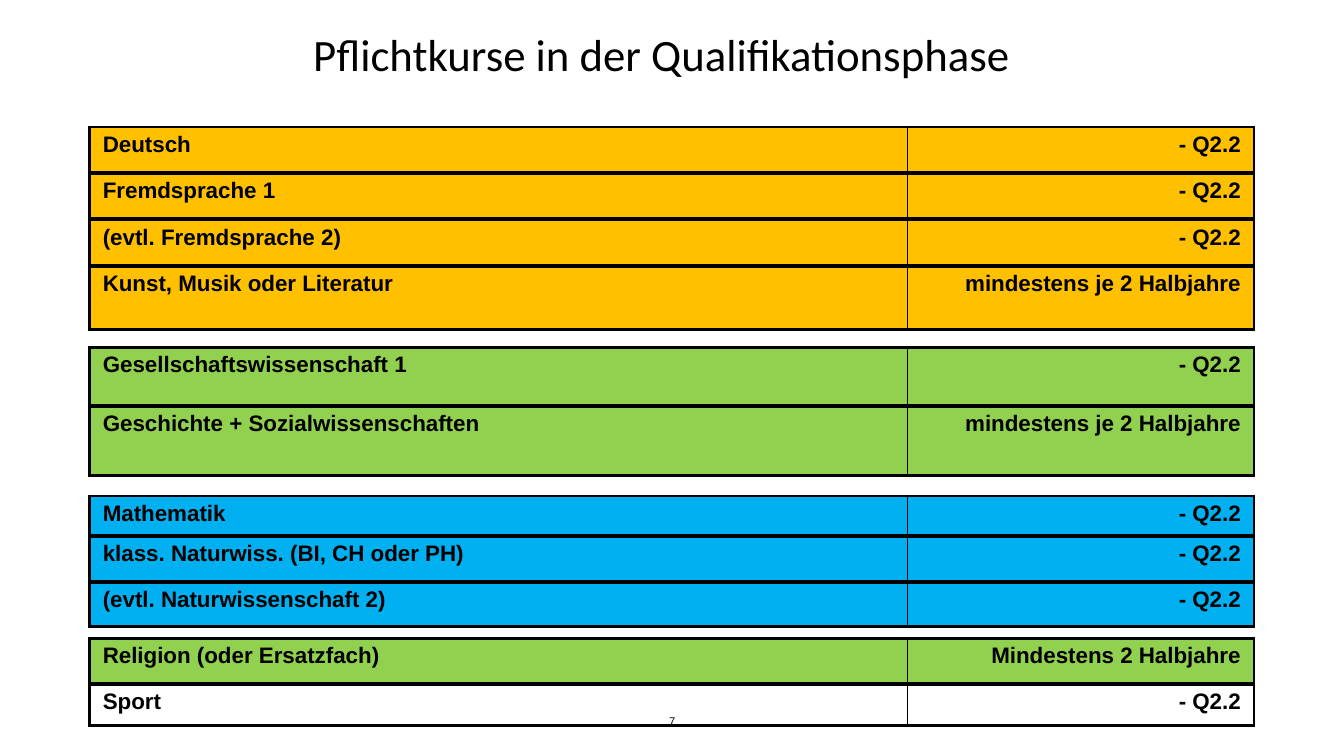
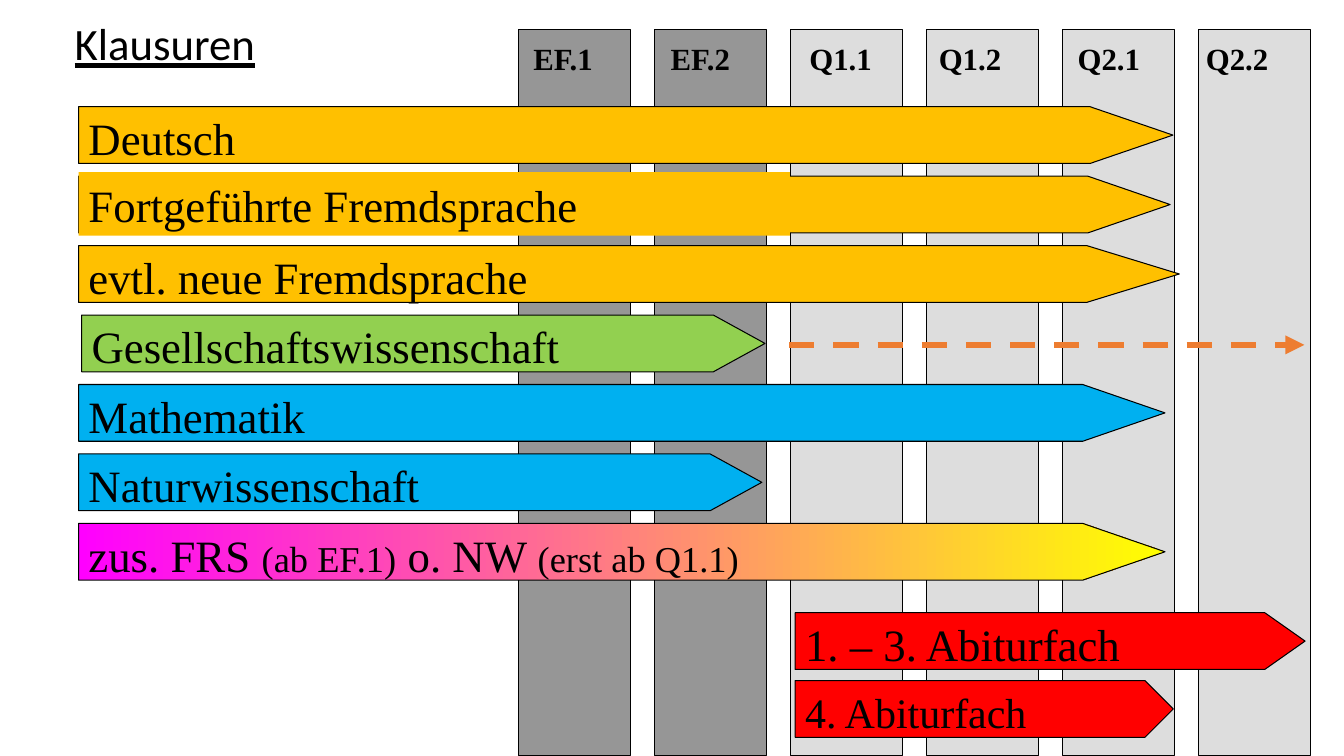
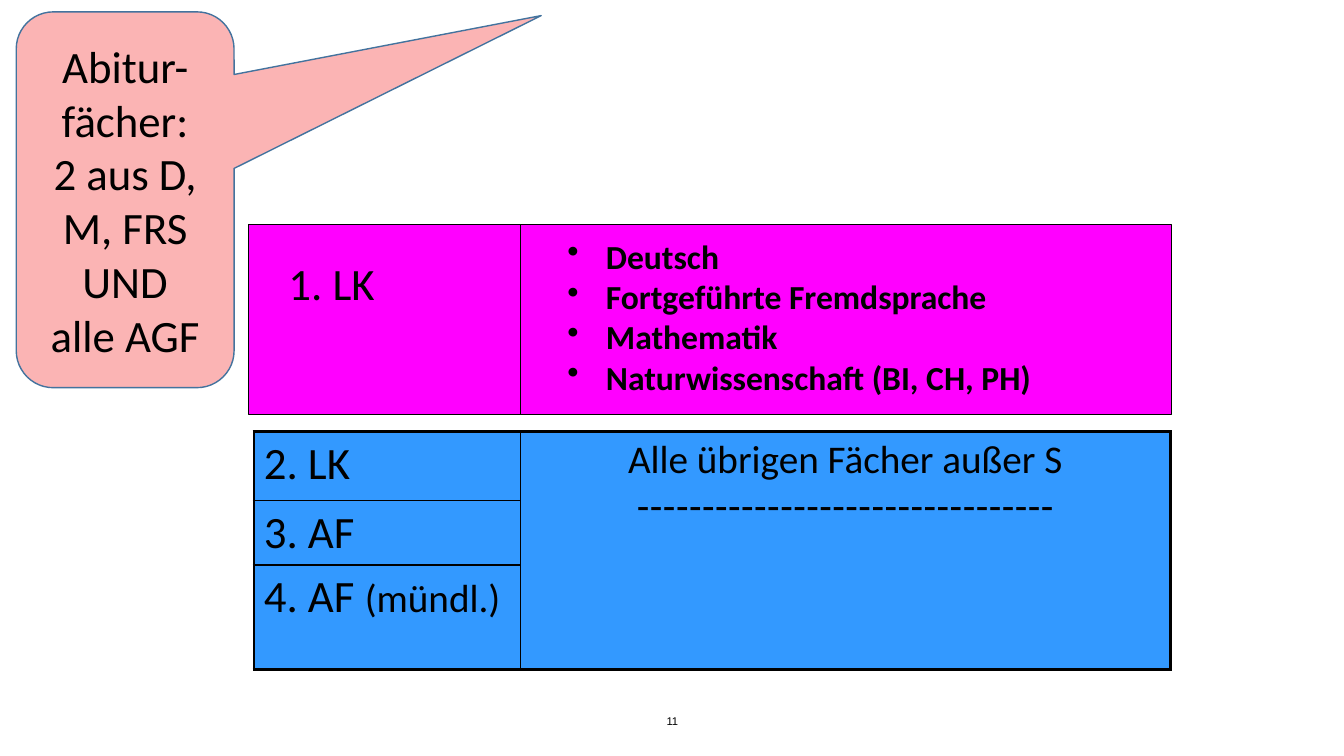
from lxml import etree
from pptx import Presentation
from pptx.dml.color import RGBColor
from pptx.enum import dml, shapes, text
from pptx.oxml import ns
from pptx.util import Cm, Pt

COLORS = {
    "black": "000000", "languages": "FFC000", "society": "92D050",
    "science": "00B0F0", "exam": "FF0000", "intro": "969696",
    "qualification": "DDDDDD", "dashes": "ED7D31", "pink": "FF00FF",
    "yellow": "FFFF00", "blue": "3399FF", "callout": "F51616",
    "callout_line": "43739E",
}
LEFT, CENTER, RIGHT = text.PP_ALIGN.LEFT, text.PP_ALIGN.CENTER, text.PP_ALIGN.RIGHT
TOP, MIDDLE = text.MSO_ANCHOR.TOP, text.MSO_ANCHOR.MIDDLE
BODY, HEADING, SERIF = "Arial", "Calibri", "Times New Roman"
INSETS = (0.25, 0.13, 0.25, 0.13)

# Course blocks: top, colour, rows of (subject, duration, height)
COURSE_BLOCKS = [
    (3.2, "languages", [
        ("Deutsch", "- Q2.2", 1.14),
        ("Fremdsprache 1", "- Q2.2", 1.14),
        ("(evtl. Fremdsprache 2)", "- Q2.2", 1.14),
        ("Kunst, Musik oder Literatur", "mindestens je 2 Halbjahre", 1.6)]),
    (8.76, "society", [
        ("Gesellschaftswissenschaft 1", "- Q2.2", 1.45),
        ("Geschichte + Sozialwissenschaften", "mindestens je 2 Halbjahre", 1.75)]),
    (12.5, "science", [
        ("Mathematik", "- Q2.2", 0.99),
        ("klass. Naturwiss. (BI, CH oder PH)", "- Q2.2", 1.12),
        ("(evtl. Naturwissenschaft 2)", "- Q2.2", 1.12)]),
    (16.08, "society", [("Religion (oder Ersatzfach)", "Mindestens 2 Halbjahre", 1.14)]),
    (17.25, None, [("Sport", "- Q2.2", 1.04)]),
]
COURSE_LEFT, COURSE_COLUMNS, COURSE_GAP = 2.26, (20.6, 8.74), 0.03

# Terms: name, colour, text inset
TERMS = [
    ("EF.1", "intro", 0.38), ("EF.2", "intro", 0.41),
    ("Q1.1", "qualification", 0.48), ("Q1.2", "qualification", 0.31),
    ("Q2.1", "qualification", 0.38), ("Q2.2", "qualification", 0.18),
]
TERM_LEFT, TERM_TOP, TERM_STEP, TERM_WIDTH, TERM_HEIGHT = 13.06, 0.74, 3.43, 2.82, 18.31

# Bar groups: top, step, bars of (runs, size, colour, left, width, tip)
BAR_GROUPS = [
    (2.69, 1.75, [
        (["Deutsch"], 32, "languages", 1.98, 27.58, 1.46),
        ([], 32, "languages", 1.98, 27.51, 1.45),
        (["evtl. neue Fremdsprache"], 32, "languages", 1.98, 27.74, 1.63),
        (["Gesellschaftswissenschaft"], 32, "society", 2.06, 17.22, 0.91),
        (["Mathematik"], 32, "science", 1.98, 27.38, 1.45),
        (["Naturwissenschaft"], 32, "science", 1.98, 17.22, 0.91),
        (["zus. FRS ", ("(ab EF.1)", 26), " o. NW ", ("(erst ab Q1.1)", 26)],
         32, ("pink", "yellow"), 1.98, 27.38, 1.45)]),
    (15.44, 1.71, [
        (["1. – 3. Abiturfach"], 32, "exam", 20.04, 12.85, 0.71),
        (["4. Abiturfach"], 30, "exam", 20.04, 9.53, 0.5)]),
]
BAR_HEIGHT = 1.43

MAIN_SUBJECTS = ["Deutsch", "Fortgeführte Fremdsprache", "Mathematik",
                 "Naturwissenschaft (BI, CH, PH)"]
OTHER_EXAMS = [["2. LK"], ["3. AF"], ["4. AF ", ("(mündl.)", 28)]]
CALLOUT = ["Abitur-fächer:", "2 aus D, M, FRS", "UND", "alle AGF"]


def rgb(name):
    return RGBColor.from_string(COLORS[name])


def box(*lengths):
    return [Cm(length) for length in lengths]


def write(frame, paragraphs, font, size, bold=False, align=LEFT, anchor=TOP,
          insets=INSETS, bullet=None):
    """Fill a frame; a paragraph is a list of runs, a run a string or (string, size)."""
    frame.word_wrap = True
    frame.vertical_anchor = anchor
    (frame.margin_left, frame.margin_top,
     frame.margin_right, frame.margin_bottom) = box(*insets)
    for index, runs in enumerate(paragraphs):
        paragraph = frame.add_paragraph() if index else frame.paragraphs[0]
        paragraph.alignment = align
        if bullet:
            properties = paragraph._p.get_or_add_pPr()
            properties.set("marL", str(Cm(0.97)))
            properties.set("indent", str(Cm(-0.97)))
            etree.SubElement(properties, ns.qn("a:buChar")).set("char", bullet)
        for item in runs:
            words, run_size = (item, size) if isinstance(item, str) else item
            run = paragraph.add_run()
            run.text = words
            run.font.name, run.font.size, run.font.bold = font, Pt(run_size), bold
            run.font.color.rgb = rgb("black")


def add_shape(slide, kind, place, fill, line="black", width=0.75):
    """Add a preset shape; a pair of fill colours makes a gradient from left to right."""
    shape = slide.shapes.add_shape(kind, *box(*place))
    shape.shadow.inherit = False
    if isinstance(fill, tuple):
        shape.fill.gradient()
        shape.fill.gradient_angle = 0
        for position, (stop, name) in enumerate(zip(shape.fill.gradient_stops, fill)):
            stop.position, stop.color.rgb = position, rgb(name)
    else:
        shape.fill.solid()
        shape.fill.fore_color.rgb = rgb(fill)
    if line:
        shape.line.color.rgb, shape.line.width = rgb(line), Pt(width)
    else:
        shape.line.fill.background()
    return shape


def add_table(slide, left, top, columns, rows):
    shape = slide.shapes.add_table(
        len(rows), len(columns), *box(left, top, sum(columns), sum(rows)))
    table = shape.table
    table.first_row = table.horz_banding = False
    for column, width in zip(table.columns, columns):
        column.width = Cm(width)
    for row, height in zip(table.rows, rows):
        row.height = Cm(height)
    return table


def style_cells(table, fill):
    """Draw thick outer and thin inner borders, and fill the cells."""
    row_count, column_count = len(table.rows), len(table.columns)
    for r in range(row_count):
        for c in range(column_count):
            cell = table.cell(r, c)
            below = r + (cell.span_height if cell.is_merge_origin else 1)
            outer = {"L": c == 0, "R": c == column_count - 1,
                     "T": r == 0, "B": below == row_count}
            properties = cell._tc.get_or_add_tcPr()
            for side, thick in outer.items():
                if cell.is_spanned and side in "TB" and not thick:
                    continue
                border = etree.SubElement(properties, ns.qn("a:ln" + side))
                border.set("w", str(Pt(2.25 if thick else 1)))
                solid = etree.SubElement(border, ns.qn("a:solidFill"))
                etree.SubElement(solid, ns.qn("a:srgbClr")).set("val", COLORS["black"])
            if fill:
                cell.fill.solid()
                cell.fill.fore_color.rgb = rgb(fill)
            else:
                cell.fill.background()


def write_cell(cell, paragraphs, font, size, side_inset, **style):
    write(cell.text_frame, paragraphs, font, size, **style)
    cell.margin_left = cell.margin_right = Cm(side_inset)
    cell.margin_top = cell.margin_bottom = Cm(0.13)


def add_slide(presentation, title=None, place=None, align=LEFT, anchor=TOP,
              underline=False, number=None):
    slide = presentation.slides.add_slide(presentation.slide_layouts[5 if title else 6])
    if title:
        heading = slide.shapes.title
        heading.left, heading.top, heading.width, heading.height = box(*place)
        write(heading.text_frame, [[title]], HEADING, 32, align=align, anchor=anchor)
        paragraph = heading.text_frame.paragraphs[0]
        paragraph.line_spacing = 0.9
        paragraph.runs[0].font.underline = underline
    if number:
        footer = slide.shapes.add_textbox(*box(11.23, 17.65, 11.43, 1.02))
        write(footer.text_frame, [[number]], BODY, 8, align=CENTER, anchor=MIDDLE)
    return slide


def build_courses(presentation):
    slide = add_slide(presentation, "Pflichtkurse in der Qualifikationsphase",
                      (0.84, 0.71, 31.67, 1.47), CENTER, MIDDLE, number="7")
    for top, fill, rows in COURSE_BLOCKS:
        for subject, duration, height in rows:
            table = add_table(slide, COURSE_LEFT, top, COURSE_COLUMNS, [height])
            style_cells(table, fill)
            for column, (words, align) in enumerate([(subject, LEFT), (duration, RIGHT)]):
                write_cell(table.cell(0, column), [[words]], BODY, 16, 0.33,
                           bold=True, align=align)
            top += height + COURSE_GAP


def build_written_exams(presentation):
    slide = add_slide(presentation, "Klausuren", (1.63, 0.43, 10.24, 3.18),
                      underline=True)
    for index, (term, fill, inset) in enumerate(TERMS):
        column = add_shape(slide, shapes.MSO_SHAPE.RECTANGLE,
                           (TERM_LEFT + index * TERM_STEP, TERM_TOP,
                            TERM_WIDTH, TERM_HEIGHT), fill)
        write(column.text_frame, [[term]], SERIF, 22, bold=True,
              insets=(inset, 0.27, 0, 0.13))
    for top, step, bars in BAR_GROUPS:
        for index, (runs, size, fill, left, width, tip) in enumerate(bars):
            bar = add_shape(slide, shapes.MSO_SHAPE.PENTAGON,
                            (left, top + index * step, width, BAR_HEIGHT), fill)
            bar.adjustments[0] = tip
            if runs:
                write(bar.text_frame, [runs], SERIF, size, anchor=MIDDLE,
                      insets=(0.25, 0.12, 0, 0))
    language = add_shape(slide, shapes.MSO_SHAPE.RECTANGLE,
                         (1.98, 4.34, 17.93, 1.6), "languages", line=None)
    write(language.text_frame, [["Fortgeführte Fremdsprache"]], SERIF, 32)

    arrow = slide.shapes.add_connector(shapes.MSO_CONNECTOR.STRAIGHT,
                                       *box(19.89, 8.69, 32.87, 8.69))
    arrow.line.color.rgb, arrow.line.width = rgb("dashes"), Pt(4.5)
    arrow.line.dash_style = dml.MSO_LINE.DASH
    etree.SubElement(arrow.line._ln, ns.qn("a:tailEnd")).set("type", "triangle")
    etree.SubElement(arrow._element.spPr, ns.qn("a:effectLst"))


def build_exam_subjects(presentation):
    slide = add_slide(presentation, number="11")
    first_exam = add_shape(slide, shapes.MSO_SHAPE.RECTANGLE,
                           (6.27, 5.66, 6.84, 4.78), "pink")
    write(first_exam.text_frame, [["1. LK"]], HEADING, 32, insets=(1, 0.78, 0.25, 0.13))
    choices = add_shape(slide, shapes.MSO_SHAPE.RECTANGLE,
                        (13.11, 5.66, 16.41, 4.78), "pink")
    write(choices.text_frame, [[subject] for subject in MAIN_SUBJECTS], HEADING, 24,
          bold=True, insets=(1.19, 0.28, 0.25, 0.13), bullet="•")

    table = add_table(slide, 6.4, 10.87, (6.71, 16.38), (1.75, 1.61, 2.62))
    others = table.cell(0, 1)
    others.merge(table.cell(2, 1))
    style_cells(table, "blue")
    for row, runs in enumerate(OTHER_EXAMS):
        write_cell(table.cell(row, 0), [runs], HEADING, 32, 0.25)
    write_cell(others, [["Alle übrigen Fächer außer S"], ["-" * 32]], HEADING, 28, 0.25,
               align=CENTER)
    others.text_frame.paragraphs[1].runs[0].font.name = BODY

    callout = add_shape(slide, shapes.MSO_SHAPE.ROUNDED_RECTANGULAR_CALLOUT,
                        (0.41, 0.3, 5.49, 9.47), "callout", "callout_line", 1)
    for index, value in enumerate((1.91, -0.49, 0.17)):
        callout.adjustments[index] = value
    color = callout._element.spPr.find(ns.qn("a:solidFill"))[0]
    etree.SubElement(color, ns.qn("a:alpha")).set("val", "32000")
    write(callout.text_frame, [[line] for line in CALLOUT], HEADING, 32,
          align=CENTER, anchor=MIDDLE)


def main():
    presentation = Presentation()
    presentation.slide_width, presentation.slide_height = box(33.87, 19.05)
    build_courses(presentation)
    build_written_exams(presentation)
    build_exam_subjects(presentation)
    presentation.save("out.pptx")


if __name__ == "__main__":
    main()
